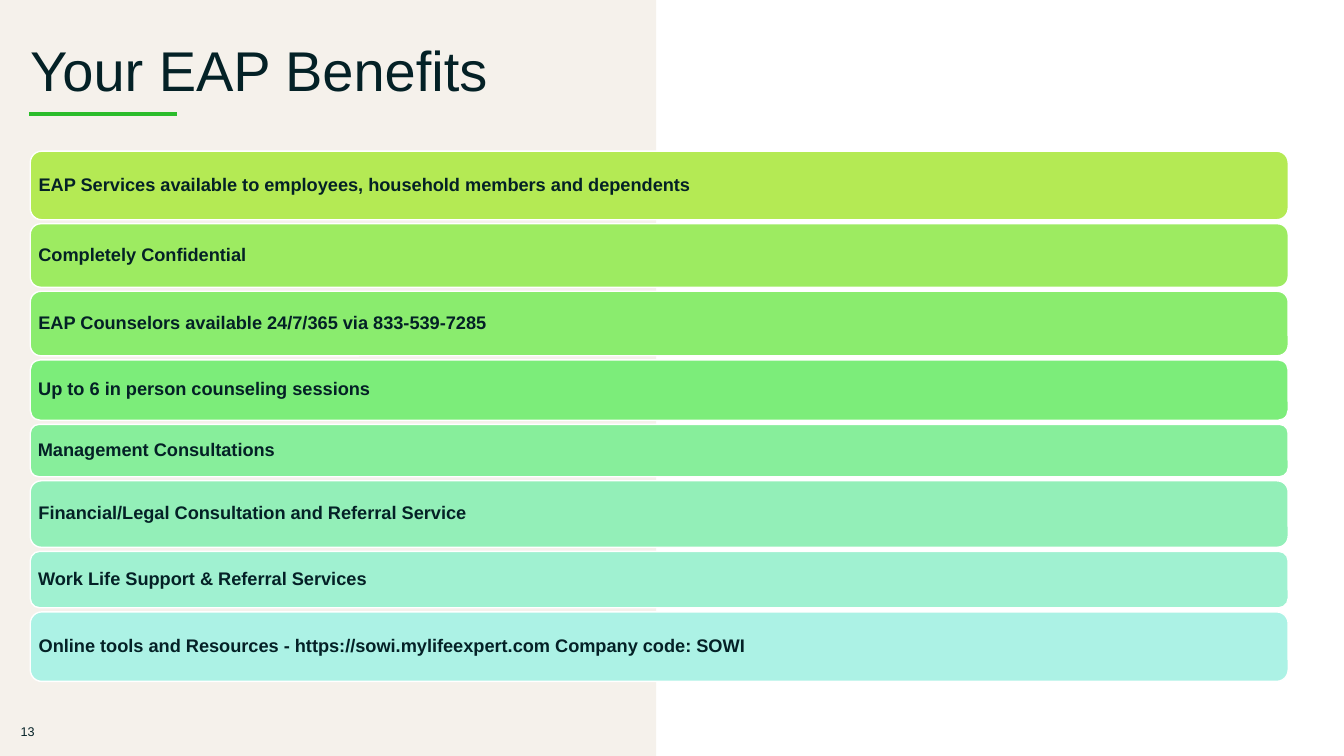
"""Build the EAP benefits slide with its stack of coloured bars."""
from dataclasses import dataclass

from lxml.etree import SubElement
from pptx import Presentation
from pptx.dml.color import RGBColor
from pptx.enum.shapes import MSO_CONNECTOR, MSO_SHAPE
from pptx.enum.text import MSO_ANCHOR, MSO_AUTO_SIZE, PP_ALIGN
from pptx.oxml.ns import qn
from pptx.util import Pt


@dataclass(frozen=True)
class Theme:
    """Colours, font and type sizes of the slide."""
    font: str = "Arial"
    ink: str = "042126"
    panel: str = "F5F1EB"
    accent: str = "2BBC2B"
    outline: str = "FFFFFF"
    title_size: float = 40
    bar_size: float = 13
    number_size: float = 9


BAR_LEFT, BAR_TOP, BAR_WIDTH, BAR_GAP = 21.6, 108, 898.56, 2.88
BENEFITS = [
    ("EAP Services available to employees, household members and dependents", 48.96, "B4EA54"),
    ("Completely Confidential", 45.36, "9DEB61"),
    ("EAP Counselors available 24/7/365 via 833-539-7285", 46.08, "8AEC6E"),
    ("Up to 6 in person counseling sessions", 43.2, "7CED7A"),
    ("Management Consultations", 37.44, "87EE9B"),
    ("Financial/Legal Consultation and Referral Service", 47.52, "93EFB8"),
    ("Work Life Support & Referral Services", 40.32, "A0F1D1"),
    ("Online tools and Resources - https://sowi.mylifeexpert.com Company code: SOWI", 49.68, "ACF2E5"),
]


class SlideBuilder:
    """Hold the theme and current slide, and add elements to it."""

    def __init__(self, slide, theme):
        """Keep the slide and its theme."""
        self.slide = slide
        self.theme = theme

    def apply(self, target, values):
        """Set every attribute named in values on target."""
        for name, value in values.items():
            setattr(target, name, value)

    def label(self, shape, text, size, bold=False, align=PP_ALIGN.LEFT, inset=0, spacing=0.9):
        """Put one formatted paragraph into a shape."""
        frame = shape.text_frame
        frame.text = text
        self.apply(frame, {
            "word_wrap": True, "auto_size": MSO_AUTO_SIZE.NONE,
            "vertical_anchor": MSO_ANCHOR.MIDDLE,
            "margin_left": Pt(inset), "margin_right": Pt(inset),
            "margin_top": Pt(inset), "margin_bottom": Pt(inset),
        })
        paragraph = frame.paragraphs[0]
        self.apply(paragraph, {"alignment": align, "line_spacing": spacing})
        font = paragraph.runs[0].font
        self.apply(font, {"name": self.theme.font, "size": Pt(size), "bold": bold})
        font.color.rgb = RGBColor.from_string(self.theme.ink)

    def block(self, kind, left, top, width, height, fill, outline=None):
        """Add a filled preset shape, with an optional outline."""
        shape = self.slide.shapes.add_shape(kind, Pt(left), Pt(top), Pt(width), Pt(height))
        shape.shadow.inherit = False
        shape.fill.solid()
        shape.fill.fore_color.rgb = RGBColor.from_string(fill)
        if outline:
            shape.line.color.rgb = RGBColor.from_string(outline)
            shape.line.width = Pt(1)
        else:
            shape.line.fill.background()
        return shape

    def rule(self, left, right, top, width):
        """Add a horizontal accent line."""
        line = self.slide.shapes.add_connector(
            MSO_CONNECTOR.STRAIGHT, Pt(left), Pt(top), Pt(right), Pt(top))
        line.line.color.rgb = RGBColor.from_string(self.theme.accent)
        line.line.width = Pt(width)
        SubElement(line.element.spPr, qn("a:effectLst"))

    def title(self, text, left, top, width, height):
        """Fill the title placeholder and bring it in front of the panel."""
        title = self.slide.shapes.title
        self.apply(title, {"left": Pt(left), "top": Pt(top),
                           "width": Pt(width), "height": Pt(height)})
        self.label(title, text, self.theme.title_size)
        self.slide.shapes.element.append(title.element)

    def number(self, text, left, top, width, height):
        """Add the page number."""
        box = self.slide.shapes.add_textbox(Pt(left), Pt(top), Pt(width), Pt(height))
        self.label(box, text, self.theme.number_size, align=PP_ALIGN.CENTER, spacing=1.0)

    def bars(self, benefits):
        """Stack one labelled bar per benefit with equal gaps."""
        top = BAR_TOP
        for text, height, fill in benefits:
            bar = self.block(MSO_SHAPE.ROUNDED_RECTANGLE, BAR_LEFT, top, BAR_WIDTH, height,
                             fill, self.theme.outline)
            self.label(bar, text, self.theme.bar_size, bold=True, inset=3.6)
            top += height + BAR_GAP


def main():
    """Create the presentation and save it."""
    presentation = Presentation()
    presentation.slide_width, presentation.slide_height = Pt(960), Pt(540)
    slide = presentation.slides.add_slide(presentation.slide_layouts[5])
    theme = Theme()
    builder = SlideBuilder(slide, theme)
    builder.block(MSO_SHAPE.RECTANGLE, 0, 0, 468.72, 540, theme.panel)
    builder.rule(20.88, 126.72, 81.36, 3)
    builder.number("13", 0.72, 508.32, 38.16, 28.8)
    builder.title("Your EAP Benefits", BAR_LEFT, 31.68, BAR_WIDTH, 41.04)
    builder.bars(BENEFITS)
    presentation.save("out.pptx")


if __name__ == "__main__":
    main()
